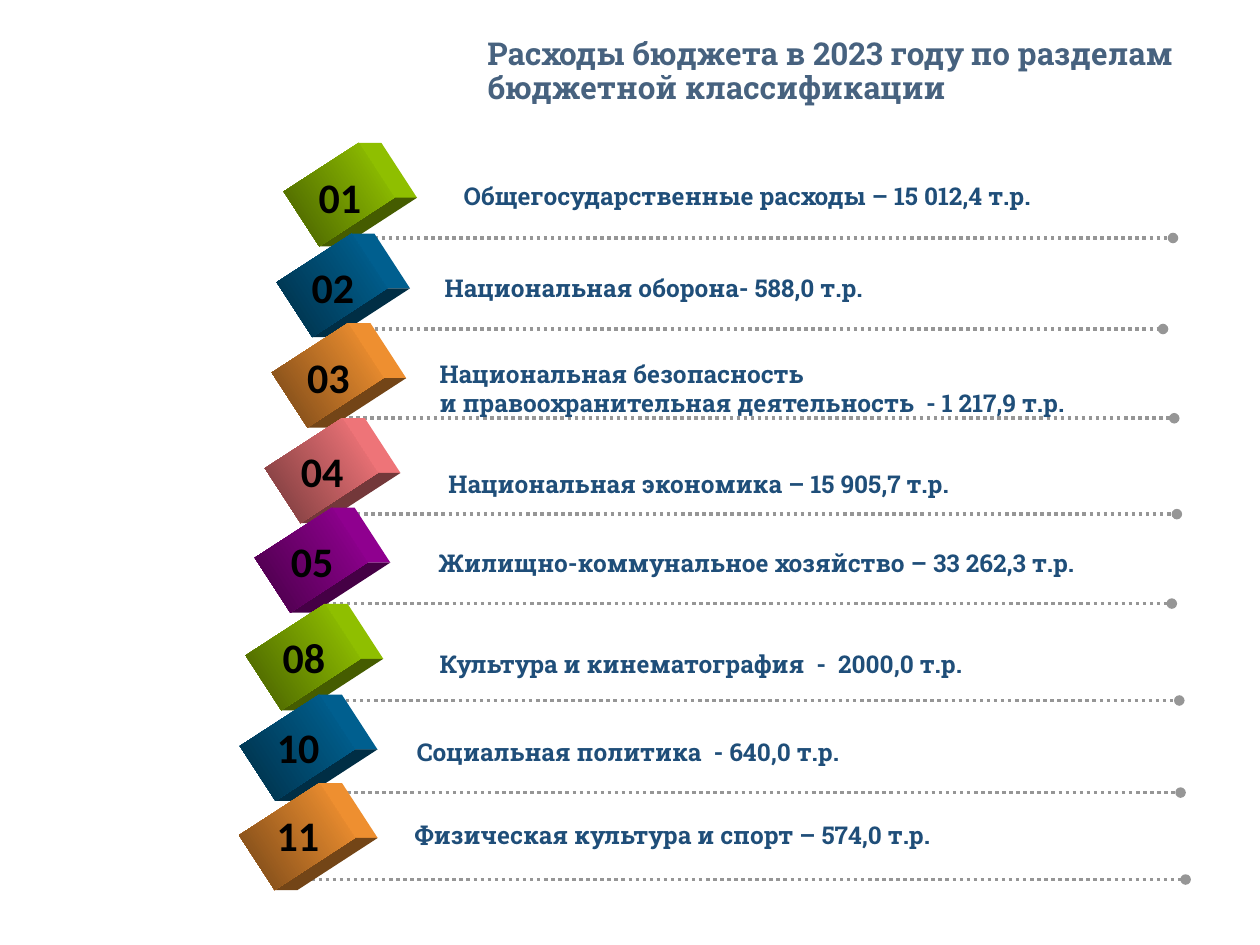
from dataclasses import dataclass
from math import cos, radians, sin

from lxml import etree
from pptx import Presentation
from pptx.dml.color import RGBColor
from pptx.enum.dml import MSO_LINE
from pptx.enum.shapes import MSO_CONNECTOR, MSO_SHAPE
from pptx.enum.text import MSO_ANCHOR
from pptx.oxml.ns import qn
from pptx.util import Pt

RECTANGLE = MSO_SHAPE.RECTANGLE
STRAIGHT = MSO_CONNECTOR.STRAIGHT
DOTTED = MSO_LINE.ROUND_DOT
MIDDLE = MSO_ANCHOR.MIDDLE

TITLE_BLUE = RGBColor(0x47, 0x62, 0x7F)
LABEL_BLUE = RGBColor(0x1F, 0x4E, 0x79)
BLACK = RGBColor(0x00, 0x00, 0x00)
GRAY = RGBColor(0x96, 0x96, 0x96)


@dataclass(frozen=True)
class Hue:
    front: RGBColor
    side: RGBColor
    dark: RGBColor


GREEN = Hue(RGBColor(0x99, 0xCC, 0x00), RGBColor(0x8F, 0xBF, 0x00), RGBColor(0x45, 0x5C, 0x00))
BLUE = Hue(RGBColor(0x00, 0x66, 0x99), RGBColor(0x00, 0x5F, 0x8F), RGBColor(0x00, 0x2E, 0x45))
ORANGE = Hue(RGBColor(0xFF, 0x99, 0x33), RGBColor(0xEE, 0x8F, 0x30), RGBColor(0x73, 0x45, 0x17))
PINK = Hue(RGBColor(0xFF, 0x7C, 0x80), RGBColor(0xEE, 0x74, 0x78), RGBColor(0x73, 0x38, 0x3A))
PURPLE = Hue(RGBColor(0x99, 0x00, 0x99), RGBColor(0x8F, 0x00, 0x8F), RGBColor(0x45, 0x00, 0x45))

TITLE_FONT = {"name": "Roboto Slab", "size": Pt(18), "bold": True}
LABEL_FONT = {"name": "Roboto Slab", "size": Pt(14), "bold": True}
NUMBER_FONT = {"name": "Calibri", "size": Pt(24), "bold": True}

CUBE_WIDTH = 37.4
CUBE_TILT = 57
CUBE_DEPTH = 13
LINE_INSET = 23  # from the left of the cube to the start of its dotted line
NUMBER_DROP = 8.6
NUMBER_SIZE = (38.9, 36.7)
LABEL_LINE = 16.8


@dataclass(frozen=True)
class Section:
    number: str
    lines: tuple[str, ...]
    hue: Hue
    cube_left: float
    cube_top: float
    cube_height: float
    line_y: float
    line_end: float
    label_left: float
    label_top: float
    label_width: float


SECTIONS = (
    Section("01", ("Общегосударственные расходы – 15 012,4 т.р.",), GREEN,
            175, 85.7, 51.1, 136, 670.3, 257.8, 100.1, 383),
    Section("02", ("Национальная оборона- 588,0 т.р.",), BLUE,
            171, 137.5, 51.1, 188, 664.6, 247, 152.6, 281.5),
    Section("03", ("Национальная безопасность",
                   "и правоохранительная деятельность  - 1 217,9 т.р."), ORANGE,
            168.5, 188.6, 51.8, 239, 671, 244.1, 201.6, 408),
    Section("04", ("Национальная экономика – 15 905,7 т.р.",), PINK,
            164.9, 242.6, 52.6, 293.8, 672.5, 249.1, 264.4, 337),
    Section("05", ("Жилищно-коммунальное хозяйство – 33 262,3 т.р.",), PURPLE,
            159.1, 293.8, 52.6, 344.9, 669.6, 243.4, 309.6, 407),
    Section("08", ("Культура и кинематография  -  2000,0 т.р.",), GREEN,
            154.5, 348.5, 54, 400.3, 673.9, 244.1, 367.2, 345.6),
    Section("10", ("Социальная политика  - 640,0 т.р.",), BLUE,
            151.2, 400.3, 54, 452.9, 674.6, 231.1, 417.6, 278),
    Section("11", ("Физическая культура и спорт – 574,0 т.р.",), ORANGE,
            151, 450.7, 54.7, 502.6, 677.5, 229.7, 465.1, 420),
)


def add_text(shapes, lines: tuple[str, ...], left: float, top: float, width: float,
             height: float, font: dict, color: RGBColor, wrap: bool = True):
    box = shapes.add_textbox(Pt(left), Pt(top), Pt(width), Pt(height))
    frame = box.text_frame
    frame.word_wrap = wrap
    for index, line in enumerate(lines):
        paragraph = frame.paragraphs[0] if index == 0 else frame.add_paragraph()
        run = paragraph.add_run()
        run.text = line
        for attribute, value in font.items():
            setattr(run.font, attribute, value)
        run.font.color.rgb = color
    return frame


def add_dotted_line(shapes, start: float, end: float, y: float) -> None:
    """Dotted rule with a round dot at its right end."""
    rule = shapes.add_connector(STRAIGHT, Pt(start), Pt(y), Pt(end), Pt(y))
    rule.line.color.rgb = GRAY
    rule.line.width = Pt(2)
    rule.line.dash_style = DOTTED
    etree.SubElement(rule.line._get_or_add_ln(), qn("a:tailEnd"), type="oval")
    etree.SubElement(rule._element.spPr, qn("a:effectLst"))


def add_face(shapes, start: tuple, end: tuple, color: RGBColor) -> None:
    """Side of a cube: the edge from start to end, pushed back by the depth."""
    corners = [start, (start[0] + CUBE_DEPTH, start[1]), (end[0] + CUBE_DEPTH, end[1]), end]
    points = [(Pt(x), Pt(y)) for x, y in corners]
    builder = shapes.build_freeform(*points[0])
    builder.add_line_segments(points[1:])
    face = builder.convert_to_shape()
    face.shadow.inherit = False
    face.fill.solid()
    face.fill.fore_color.rgb = color
    face.line.fill.background()


def add_cube(shapes, left: float, top: float, height: float, hue: Hue) -> None:
    tilt = radians(CUBE_TILT)
    center_x, center_y = left + CUBE_WIDTH / 2, top + height / 2

    def corner(across: int, down: int) -> tuple[float, float]:
        x, y = across * CUBE_WIDTH / 2, down * height / 2
        return (center_x + x * cos(tilt) - y * sin(tilt),
                center_y + x * sin(tilt) + y * cos(tilt))

    add_face(shapes, corner(-1, -1), corner(1, -1), hue.side)
    add_face(shapes, corner(1, -1), corner(1, 1), hue.dark)
    front = shapes.add_shape(RECTANGLE, Pt(left), Pt(top), Pt(CUBE_WIDTH), Pt(height))
    front.rotation = CUBE_TILT
    front.shadow.inherit = False
    front.line.fill.background()
    front.fill.gradient()
    front.fill.gradient_angle = 270
    for stop, color in zip(front.fill.gradient_stops, (hue.front, hue.dark)):
        stop.color.rgb = color


def add_section(slide, section: Section) -> None:
    shapes = slide.shapes.add_group_shape().shapes
    add_dotted_line(shapes, section.cube_left + LINE_INSET, section.line_end, section.line_y)
    add_cube(shapes, section.cube_left, section.cube_top, section.cube_height, section.hue)
    add_text(shapes, section.lines, section.label_left, section.label_top,
             section.label_width, 7.2 + LABEL_LINE * len(section.lines),
             LABEL_FONT, LABEL_BLUE)
    add_text(shapes, (section.number,), section.cube_left, section.cube_top + NUMBER_DROP,
             *NUMBER_SIZE, NUMBER_FONT, BLACK, wrap=False)


def main() -> None:
    presentation = Presentation()
    presentation.slide_width, presentation.slide_height = Pt(720), Pt(540)
    slide = presentation.slides.add_slide(presentation.slide_layouts[6])
    title = add_text(slide.shapes, ("Расходы бюджета в 2023 году по разделам бюджетной классификации",),
                     271.4, 5.8, 430.6, 70.6, TITLE_FONT, TITLE_BLUE)
    title.vertical_anchor = MIDDLE
    title.paragraphs[0].line_spacing = 0.9
    for section in SECTIONS:
        add_section(slide, section)
    presentation.save("out.pptx")


if __name__ == "__main__":
    main()
